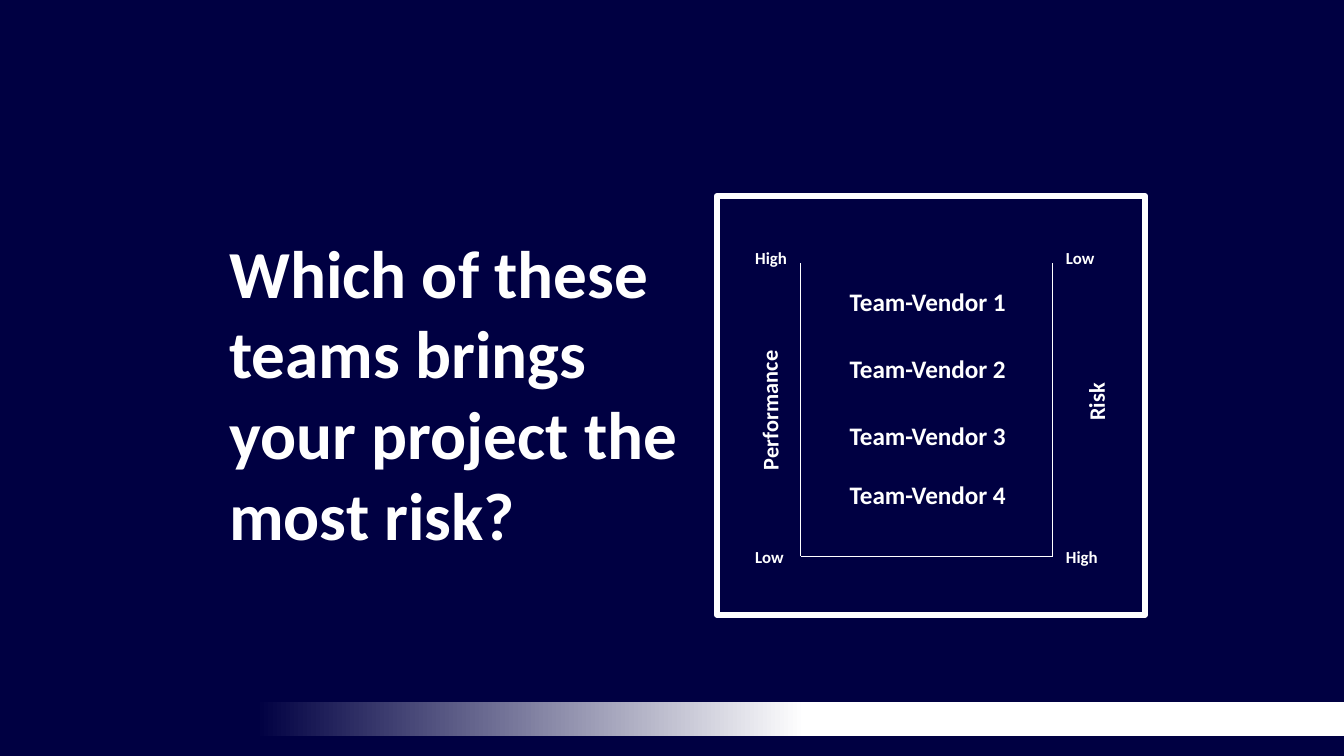
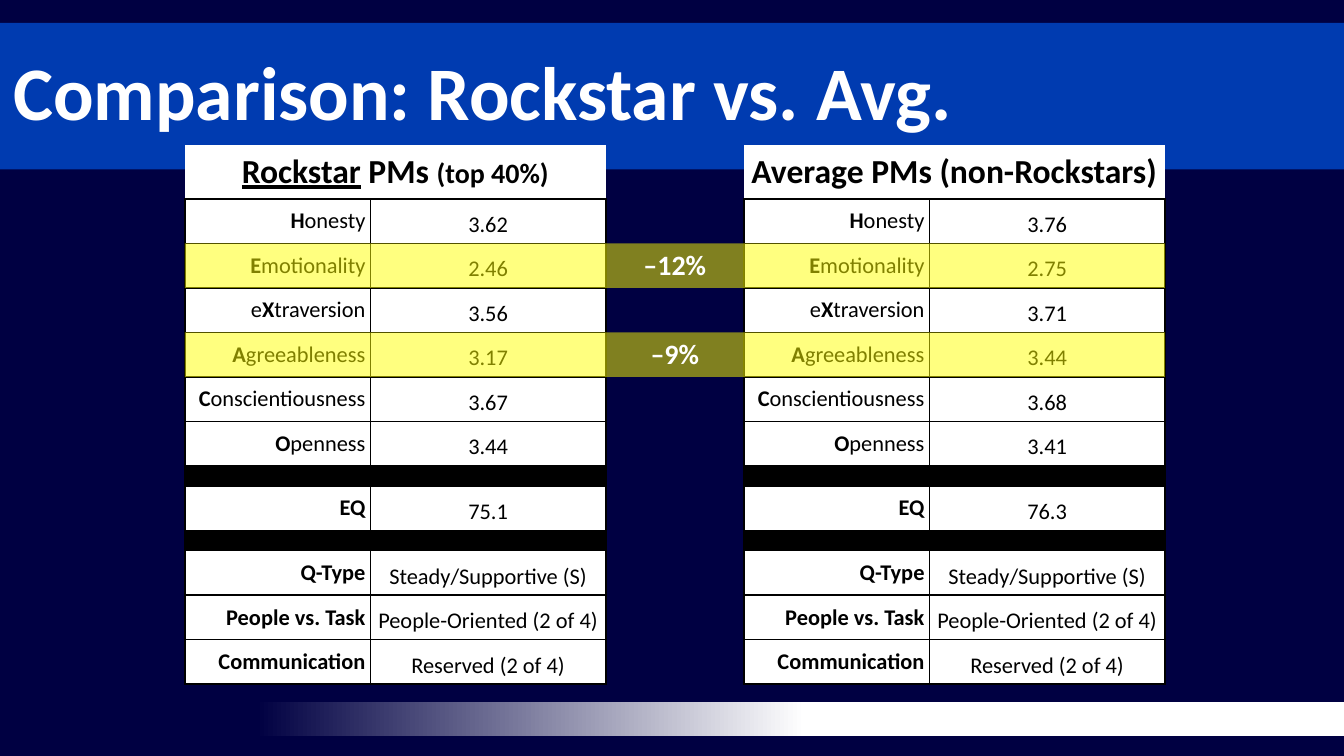
from lxml import etree
from pptx import Presentation
from pptx.dml.color import RGBColor
from pptx.enum.shapes import MSO_CONNECTOR, MSO_SHAPE
from pptx.enum.text import MSO_ANCHOR, MSO_AUTO_SIZE, PP_ALIGN
from pptx.oxml.ns import qn
from pptx.util import Pt

RECTANGLE, STRAIGHT = MSO_SHAPE.RECTANGLE, MSO_CONNECTOR.STRAIGHT
LEFT, CENTER, RIGHT = PP_ALIGN.LEFT, PP_ALIGN.CENTER, PP_ALIGN.RIGHT
TOP, MIDDLE, BOTTOM = MSO_ANCHOR.TOP, MSO_ANCHOR.MIDDLE, MSO_ANCHOR.BOTTOM
GROW = MSO_AUTO_SIZE.SHAPE_TO_FIT_TEXT

NAVY, BLUE, WHITE, BLACK, YELLOW = "000042", "003BB0", "FFFFFF", "000000", "FFFF00"
FONT = "Calibri"
PAGE_WIDTH, PAGE_HEIGHT = 720, 405
CELL_INSET = 2.7
NO_GRID_STYLE = "{2D5ABB26-0587-4C30-8999-92F81FD0307C}"


def color(code):
    return RGBColor.from_string(code)


class Builder:
    """Holds the shared style and the current slide."""

    def __init__(self):
        self.deck = Presentation()
        self.deck.slide_width, self.deck.slide_height = Pt(PAGE_WIDTH), Pt(PAGE_HEIGHT)
        self.page = None

    def add_page(self):
        self.page = self.deck.slides.add_slide(self.deck.slide_layouts[6])
        self.page.background.fill.solid()
        self.page.background.fill.fore_color.rgb = color(NAVY)
        band = self.rectangle(93, 376, 627, 18.5)
        band.fill.gradient()
        band.fill.gradient_angle = 0
        stops = ((0.07, NAVY), (0.54, WHITE))
        for stop, (position, code) in zip(band.fill.gradient_stops, stops):
            stop.position = position
            stop.color.rgb = color(code)

    def rectangle(self, left, top, width, height, fill=None, line=None, weight=1):
        box = self.page.shapes.add_shape(RECTANGLE, Pt(left), Pt(top), Pt(width), Pt(height))
        box.shadow.inherit = False
        if fill:
            box.fill.solid()
            box.fill.fore_color.rgb = color(fill)
        else:
            box.fill.background()
        if line:
            box.line.color.rgb = color(line)
            box.line.width = Pt(weight)
        else:
            box.line.fill.background()
        return box

    def span(self, para, text, size, code=WHITE, bold=True, underline=False):
        span = para.add_run()
        span.text = text
        font = span.font
        font.name, font.size, font.bold = FONT, Pt(size), bold
        font.color.rgb = color(code)
        if underline:
            font.underline = True

    def text(self, left, top, width, height, words, size, align=LEFT, anchor=TOP,
             rotation=0, grow=True):
        box = self.page.shapes.add_textbox(Pt(left), Pt(top), Pt(width), Pt(height))
        box.rotation = rotation
        frame = box.text_frame
        frame.word_wrap = True
        frame.vertical_anchor = anchor
        if grow:
            frame.auto_size = GROW
        para = frame.paragraphs[0]
        para.alignment = align
        self.span(para, words, size)

    def title(self, words):
        box = self.rectangle(0, 12.25, PAGE_WIDTH, 78.5, fill=BLUE)
        box.text_frame.word_wrap = True
        box.text_frame.vertical_anchor = MIDDLE
        para = box.text_frame.paragraphs[0]
        para.alignment = LEFT
        para.line_spacing = 0.9
        self.span(para, words, 40.5)

    def line(self, x1, y1, x2, y2):
        line = self.page.shapes.add_connector(STRAIGHT, Pt(x1), Pt(y1), Pt(x2), Pt(y2))
        line.line.color.rgb = color(WHITE)
        line.line.width = Pt(0.75)
        etree.SubElement(line.element.spPr, qn("a:effectLst"))

    def table(self, left, top, widths, heights):
        frame = self.page.shapes.add_table(len(heights), len(widths), Pt(left), Pt(top),
                                           Pt(sum(widths)), Pt(sum(heights)))
        for style in frame.element.iter(qn("a:tableStyleId")):
            style.text = NO_GRID_STYLE
        table = frame.table
        table.first_row = table.horz_banding = False
        for column, width in zip(table.columns, widths):
            column.width = Pt(width)
        for row, height in zip(table.rows, heights):
            row.height = Pt(height)
        return table

    def cell(self, cell, spans=(), align=CENTER, anchor=MIDDLE, fill=WHITE, opacity=None,
             borders=""):
        """Each span is a tuple of arguments for span(); borders lists sides from LRTB."""
        properties = cell._tc.get_or_add_tcPr()
        for side in borders:
            edge = etree.SubElement(properties, qn("a:ln" + side), w=str(Pt(1)))
            solid = etree.SubElement(edge, qn("a:solidFill"))
            etree.SubElement(solid, qn("a:srgbClr"), val=BLACK)
        cell.fill.solid()
        cell.fill.fore_color.rgb = color(fill)
        if opacity:
            for tint in properties.findall(qn("a:solidFill") + "/" + qn("a:srgbClr")):
                etree.SubElement(tint, qn("a:alpha"), val=str(opacity * 1000))
        cell.margin_left = cell.margin_right = Pt(CELL_INSET)
        cell.margin_top = cell.margin_bottom = Pt(CELL_INSET if spans else 0)
        cell.vertical_anchor = anchor
        para = cell.text_frame.paragraphs[0]
        para.alignment = align
        for span in spans:
            self.span(para, *span)
        if not spans:  # keeps an empty row from growing
            etree.SubElement(para._p, qn("a:endParaRPr"), sz="600")


# Comparison tables: plain start, bold part and plain end of each row label
LABELS = [
    ("", "H", "onesty"), ("", "E", "motionality"), ("e", "X", "traversion"),
    ("", "A", "greeableness"), ("", "C", "onscientiousness"), ("", "O", "penness"),
    None, ("", "EQ", ""), None,
    ("", "Q-Type", ""), ("", "People vs. Task", ""), ("", "Communication", ""),
]
STYLE_VALUES = ["Steady/Supportive (S)", "People-Oriented (2 of 4)", "Reserved (2 of 4)"]
ROCKSTAR = ["3.62", "2.46", "3.56", "3.17", "3.67", "3.44", "75.1"] + STYLE_VALUES
AVERAGE = ["3.76", "2.75", "3.71", "3.44", "3.68", "3.41", "76.3"] + STYLE_VALUES

TABLE_TOP, HEADER_HEIGHT, ROW_HEIGHT, GAP_HEIGHT = 77.75, 28.8, 23.85, 10.8
COLUMNS = [99.5, 126]
TABLE_WIDTH = sum(COLUMNS)
ROCKSTAR_LEFT, AVERAGE_LEFT = 99, 398.5


def score_table(build, left, heading, values):
    heights = [HEADER_HEIGHT] + [ROW_HEIGHT if label else GAP_HEIGHT for label in LABELS]
    table = build.table(left, TABLE_TOP, COLUMNS, heights)
    table.cell(0, 0).merge(table.cell(0, 1))
    build.cell(table.cell(0, 0), heading, borders="B")
    build.cell(table.cell(0, 1), borders="B")
    remaining = iter(values)
    for row, label in enumerate(LABELS, 1):
        name, score = table.cell(row, 0), table.cell(row, 1)
        if label is None:
            for gap in (name, score):
                build.cell(gap, fill=BLACK, borders="LRTB")
            continue
        spans = [(part, 12, BLACK, index == 1) for index, part in enumerate(label) if part]
        build.cell(name, spans, RIGHT, borders="LRTB")
        build.cell(score, [(next(remaining), 12, BLACK, False)], CENTER, BOTTOM,
                   borders="LRTB")


def highlight(build, row, difference):
    """Yellow strip across both tables over a score row."""
    top = TABLE_TOP + HEADER_HEIGHT + row * ROW_HEIGHT
    middle = AVERAGE_LEFT - ROCKSTAR_LEFT - TABLE_WIDTH
    table = build.table(ROCKSTAR_LEFT, top, [TABLE_WIDTH, middle, TABLE_WIDTH], [ROW_HEIGHT])
    for column, words in enumerate(["", difference, ""]):
        build.cell(table.cell(0, column), [(words, 15)] if words else (), fill=YELLOW,
                   opacity=50)


def risk_page(build):
    build.add_page()
    # Teams, best performer first
    for number, top in enumerate([149.75, 185.75, 221.75, 253.5], 1):
        build.text(432, top, 130, 23.5, f"Team-Vendor {number}", 13.5, CENTER)
    # Axes
    left, right, top, bottom = 429, 564, 141, 298
    build.line(left, top, left, bottom)
    build.line(left, bottom, right, bottom)
    build.line(right, top, right, bottom)
    for name, x, y in (("Performance", 342, 209), ("Risk", 517, 204.5)):
        build.text(x, y, 140.5, 21.75, name, 12, CENTER, rotation=269.5)
    # Ends of the two scales
    for x, high, low in ((397.5, "High", "Low"), (right, "Low", "High")):
        build.text(x, 129, 44.5, 18, high, 9)
        build.text(x, 289.5, 44.5, 18, low, 9)
    build.rectangle(384, 105, 229.5, 224.5, line=WHITE, weight=3)
    # Question
    build.text(115.75, 188, 259.5, 44.5,
               "Which of these teams brings your project the most risk?", 36,
               anchor=MIDDLE, grow=False)


def comparison_page(build):
    build.add_page()
    build.title("Comparison: Rockstar vs. Avg.")
    score_table(build, AVERAGE_LEFT, [("Average PMs (non-Rockstars)", 18, BLACK)], AVERAGE)
    heading = [("Rockstar", 18, BLACK, True, True), (" PMs ", 18, BLACK),
               ("(top 40%)", 15, BLACK)]
    score_table(build, ROCKSTAR_LEFT, heading, ROCKSTAR)
    highlight(build, 3, "–9%")
    highlight(build, 1, "–12%")


def main():
    build = Builder()
    risk_page(build)
    comparison_page(build)
    build.deck.save("out.pptx")


if __name__ == "__main__":
    main()
